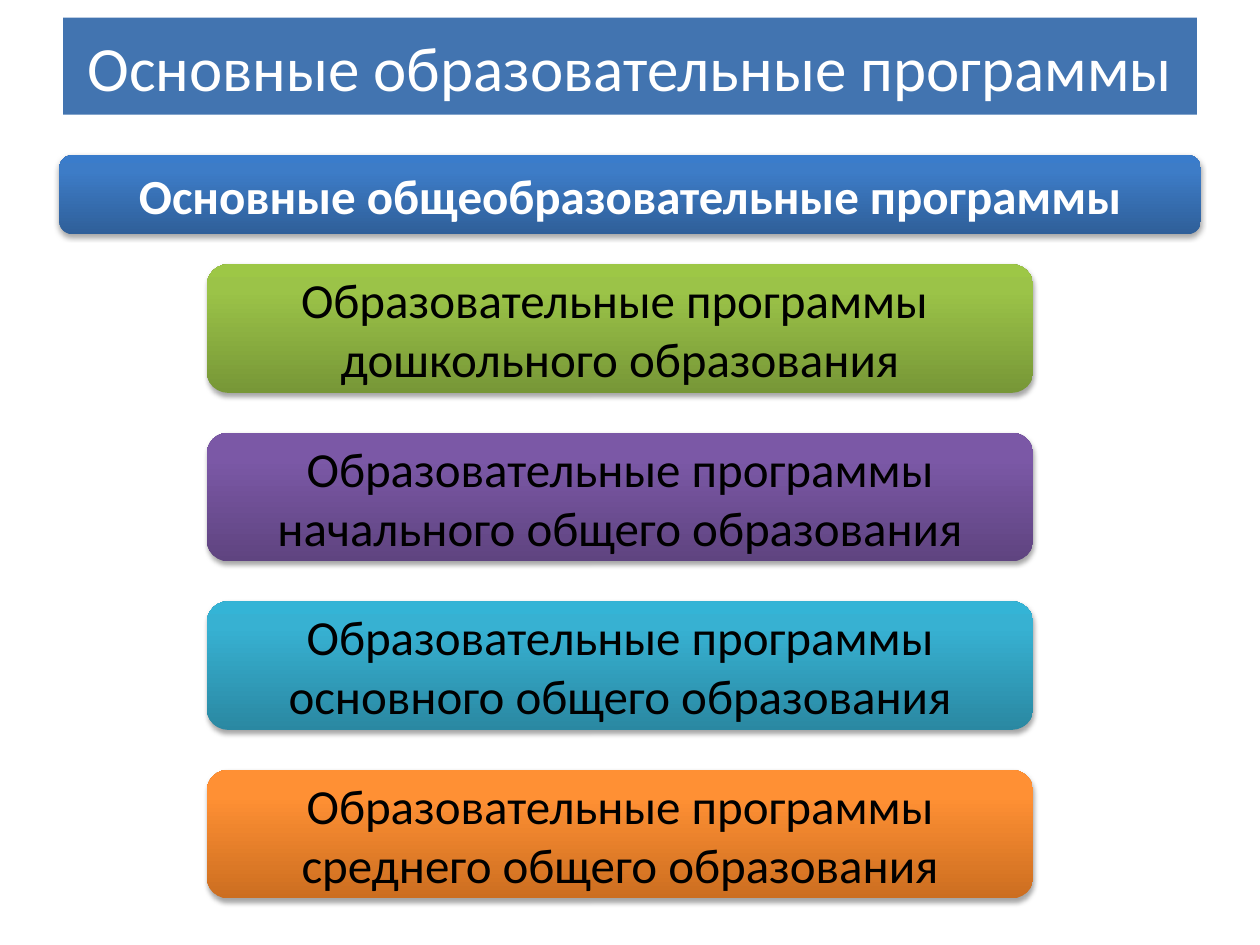
import copy
from dataclasses import dataclass

import pptx
import pptx.dml.color
import pptx.enum.shapes
import pptx.enum.text
import pptx.oxml
import pptx.oxml.ns
import pptx.util

Pt = pptx.util.Pt
RGB = pptx.dml.color.RGBColor.from_string
qn = pptx.oxml.ns.qn


@dataclass(frozen=True)
class Theme:
    font: str = "Calibri"
    title_size: float = 36
    body_size: float = 28
    light: str = "FFFFFF"
    dark: str = "000000"
    title_fill: str = "4274B0"
    blue: tuple[str, ...] = ("2F5F99", "3D7CC7", "3A7CCB")
    green: tuple[str, ...] = ("779737", "9BC348", "9DC746")
    purple: tuple[str, ...] = ("5F4480", "7B58A6", "7C57A8")
    teal: tuple[str, ...] = ("2A88A2", "37B1D2", "34B4D6")
    orange: tuple[str, ...] = ("CC6E20", "FF9034", "FF9136")


@dataclass(frozen=True)
class Box:
    left: float
    top: float
    width: float
    height: float


@dataclass(frozen=True)
class Program:
    paragraphs: tuple[str, ...]
    colors: tuple[str, ...]


THEME = Theme()
STOPS = (0, 0.8, 1)
TITLE_BOX = Box(36, 10.1, 648, 55.4)
HEADER_BOX = Box(33.9, 88.6, 652.3, 45.3)
FIRST_TOP, PITCH = 151, 96.3

HEADER = Program(("Основные общеобразовательные программы",), THEME.blue)
PROGRAMS = (
    Program(("Образовательные программы ", "дошкольного образования"), THEME.green),
    Program(("Образовательные программы начального общего образования",), THEME.purple),
    Program(("Образовательные программы основного общего образования",), THEME.teal),
    Program(("Образовательные программы среднего общего образования",), THEME.orange),
)


def write_text(sp, paragraphs: tuple[str, ...], size: float, color: str,
               bold: bool = False) -> None:
    tf = sp.text_frame
    tf.word_wrap = True
    tf.auto_size = pptx.enum.text.MSO_AUTO_SIZE.NONE
    tf.vertical_anchor = pptx.enum.text.MSO_ANCHOR.MIDDLE
    for i, text in enumerate(paragraphs):
        p = tf.add_paragraph() if i else tf.paragraphs[0]
        p.alignment = pptx.enum.text.PP_ALIGN.CENTER
        r = p.add_run()
        r.text = text
        r.font.name = THEME.font
        r.font.size = Pt(size)
        r.font.bold = bold
        r.font.color.rgb = RGB(color)


def fill_gradient(sp, colors: tuple[str, ...]) -> None:
    """Fill from the bottom edge up, one color for each of STOPS."""
    sp.fill.gradient()
    sp.fill.gradient_angle = 90
    gs_list = sp._element.spPr.find(".//" + qn("a:gsLst"))
    gs_list.append(copy.deepcopy(gs_list[-1]))
    for stop, position, color in zip(sp.fill.gradient_stops, STOPS, colors):
        stop.position = position
        stop.color.rgb = RGB(color)


def add_shadow(sp) -> None:
    sp.shadow.inherit = False
    sp._element.spPr.find(qn("a:effectLst")).append(pptx.oxml.parse_xml(
        f'<a:outerShdw {pptx.oxml.ns.nsdecls("a")} blurRad="{Pt(3.1)}" '
        f'dist="{Pt(1.8)}" dir="5400000" rotWithShape="0">'
        '<a:srgbClr val="000000"><a:alpha val="35000"/></a:srgbClr>'
        '</a:outerShdw>'))


def add_program(s, program: Program, box: Box, color: str, bold: bool = False) -> None:
    sp = s.shapes.add_shape(
        pptx.enum.shapes.MSO_SHAPE.ROUNDED_RECTANGLE,
        Pt(box.left), Pt(box.top), Pt(box.width), Pt(box.height))
    fill_gradient(sp, program.colors)
    sp.line.fill.background()
    add_shadow(sp)
    write_text(sp, program.paragraphs, THEME.body_size, color, bold)


def add_title(s, text: str, box: Box) -> None:
    sp = s.shapes.title
    sp.left, sp.top = Pt(box.left), Pt(box.top)
    sp.width, sp.height = Pt(box.width), Pt(box.height)
    sp.fill.solid()
    sp.fill.fore_color.rgb = RGB(THEME.title_fill)
    write_text(sp, (text,), THEME.title_size, THEME.light)


def main() -> None:
    prs = pptx.Presentation()
    prs.slide_width, prs.slide_height = Pt(720), Pt(540)
    s = prs.slides.add_slide(prs.slide_layouts.get_by_name("Title Only"))
    add_title(s, "Основные образовательные программы", TITLE_BOX)
    add_program(s, HEADER, HEADER_BOX, THEME.light, bold=True)
    for i, program in enumerate(PROGRAMS):
        box = Box(118.1, FIRST_TOP + i * PITCH, 472.4, 73.5)
        add_program(s, program, box, THEME.dark)
    prs.save("out.pptx")


if __name__ == "__main__":
    main()
